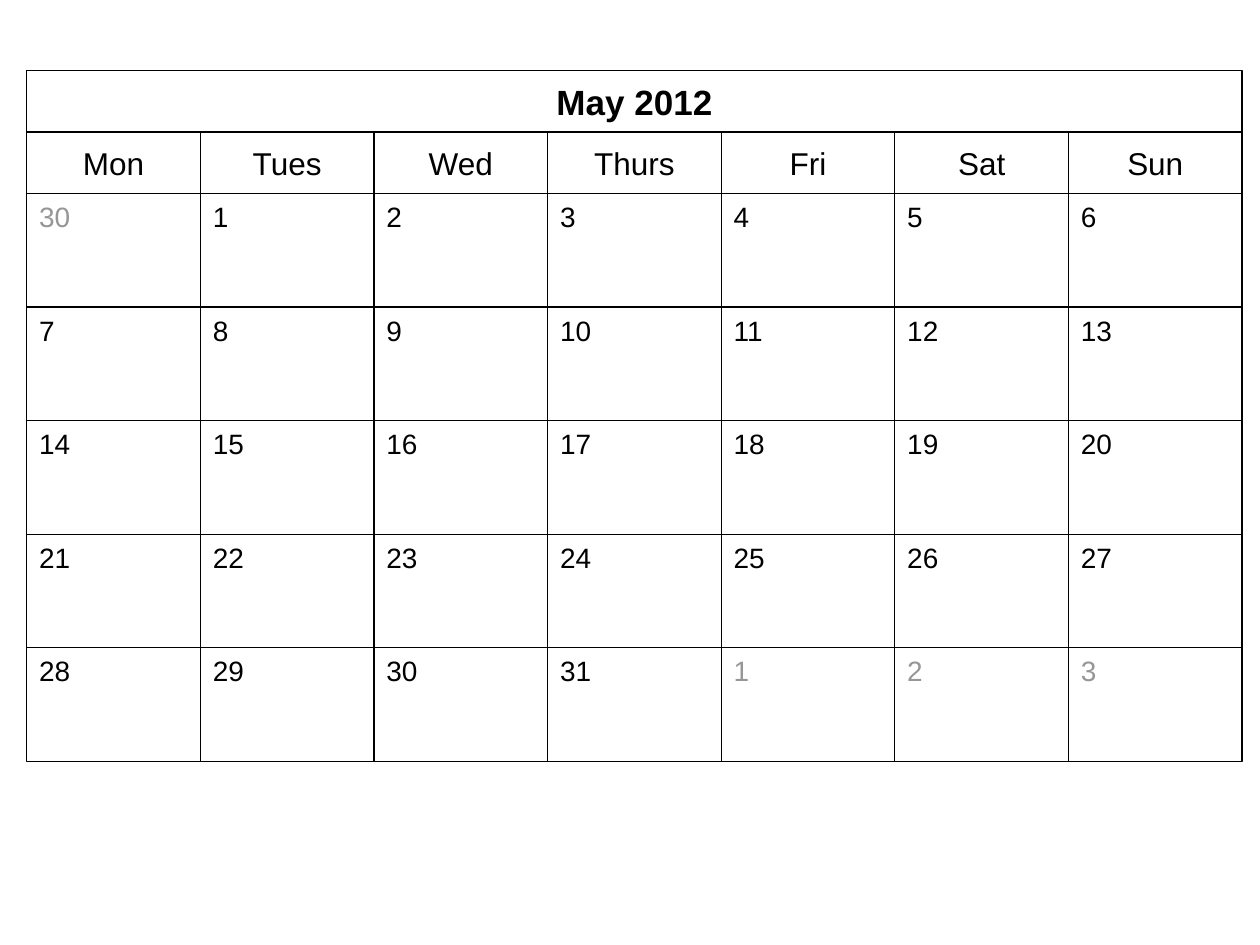
import pptx
import pptx.util
import pptx.dml.color
import pptx.enum.shapes
import pptx.enum.text

Cm = pptx.util.Cm
Pt = pptx.util.Pt
ANCHOR = pptx.enum.text.MSO_ANCHOR
ALIGN = pptx.enum.text.PP_ALIGN

COLOURS = {"paper": "FFFFFF", "ink": "000000", "other_month": "969696"}
WEEKDAYS = ["Mon", "Tues", "Wed", "Thurs", "Fri", "Sat", "Sun"]
WEEKS = 5
DAYS_IN_MONTH = 31
DAYS_IN_PREVIOUS_MONTH = 30
LEADING_DAYS = 1

LEFT, TOP = 0.54, 1.42
COLUMN_WIDTH = 3.5
HEADING_HEIGHT = 1.24
DAY_HEIGHT = 2.29
DAYS_TOP = TOP + 2 * HEADING_HEIGHT


def colour(name):
    return pptx.dml.color.RGBColor.from_string(COLOURS[name])


def write(box, text, size, ink="ink", bold=False):
    box.text_frame.text = text
    font = box.text_frame.paragraphs[0].font
    font.name = "Arial"
    font.size = Pt(size)
    font.bold = bold
    font.color.rgb = colour(ink)


def outline(box):
    box.line.color.rgb = colour("ink")
    box.line.width = Pt(0.75)


def format_heading(heading, text, size, bold=False):
    write(heading, text, size, bold=bold)
    outline(heading)
    heading.fill.solid()
    heading.fill.fore_color.rgb = colour("paper")
    frame = heading.text_frame
    frame.auto_size = pptx.enum.text.MSO_AUTO_SIZE.NONE
    frame.vertical_anchor = ANCHOR.MIDDLE
    frame.margin_left = frame.margin_right = Cm(0.25)
    frame.margin_top = frame.margin_bottom = Cm(0.05)
    frame.paragraphs[0].alignment = ALIGN.CENTER


def add_cell(slide, column, top, height):
    cell = slide.shapes.add_shape(
        pptx.enum.shapes.MSO_SHAPE.RECTANGLE,
        Cm(LEFT + column * COLUMN_WIDTH), Cm(top), Cm(COLUMN_WIDTH), Cm(height))
    cell.shadow.inherit = False
    return cell


def set_month(slide, text):
    month = slide.shapes.title
    month.left, month.top = Cm(LEFT), Cm(TOP)
    month.width = Cm(COLUMN_WIDTH * len(WEEKDAYS))
    month.height = Cm(HEADING_HEIGHT)
    format_heading(month, text, 20, bold=True)


def add_weekday(slide, column, name):
    weekday = add_cell(slide, column, TOP + HEADING_HEIGHT, HEADING_HEIGHT)
    format_heading(weekday, name, 18)


def day_label(position):
    number = position - LEADING_DAYS + 1
    if number < 1:
        return number + DAYS_IN_PREVIOUS_MONTH, "other_month"
    if number > DAYS_IN_MONTH:
        return number - DAYS_IN_MONTH, "other_month"
    return number, "ink"


def add_day(slide, position):
    week, column = divmod(position, len(WEEKDAYS))
    number, ink = day_label(position)
    day = add_cell(slide, column, DAYS_TOP + week * DAY_HEIGHT, DAY_HEIGHT)
    write(day, str(number), 16, ink)
    outline(day)
    day.fill.background()
    day.text_frame.vertical_anchor = ANCHOR.TOP
    day.text_frame.paragraphs[0].alignment = ALIGN.LEFT


def main():
    calendar = pptx.Presentation()
    calendar.slide_width, calendar.slide_height = Cm(25.4), Cm(19.05)
    slide = calendar.slides.add_slide(calendar.slide_layouts.get_by_name("Title Only"))
    set_month(slide, "May 2012")
    for column, name in enumerate(WEEKDAYS):
        add_weekday(slide, column, name)
    for position in range(WEEKS * len(WEEKDAYS)):
        add_day(slide, position)
    calendar.save("out.pptx")


if __name__ == "__main__":
    main()
